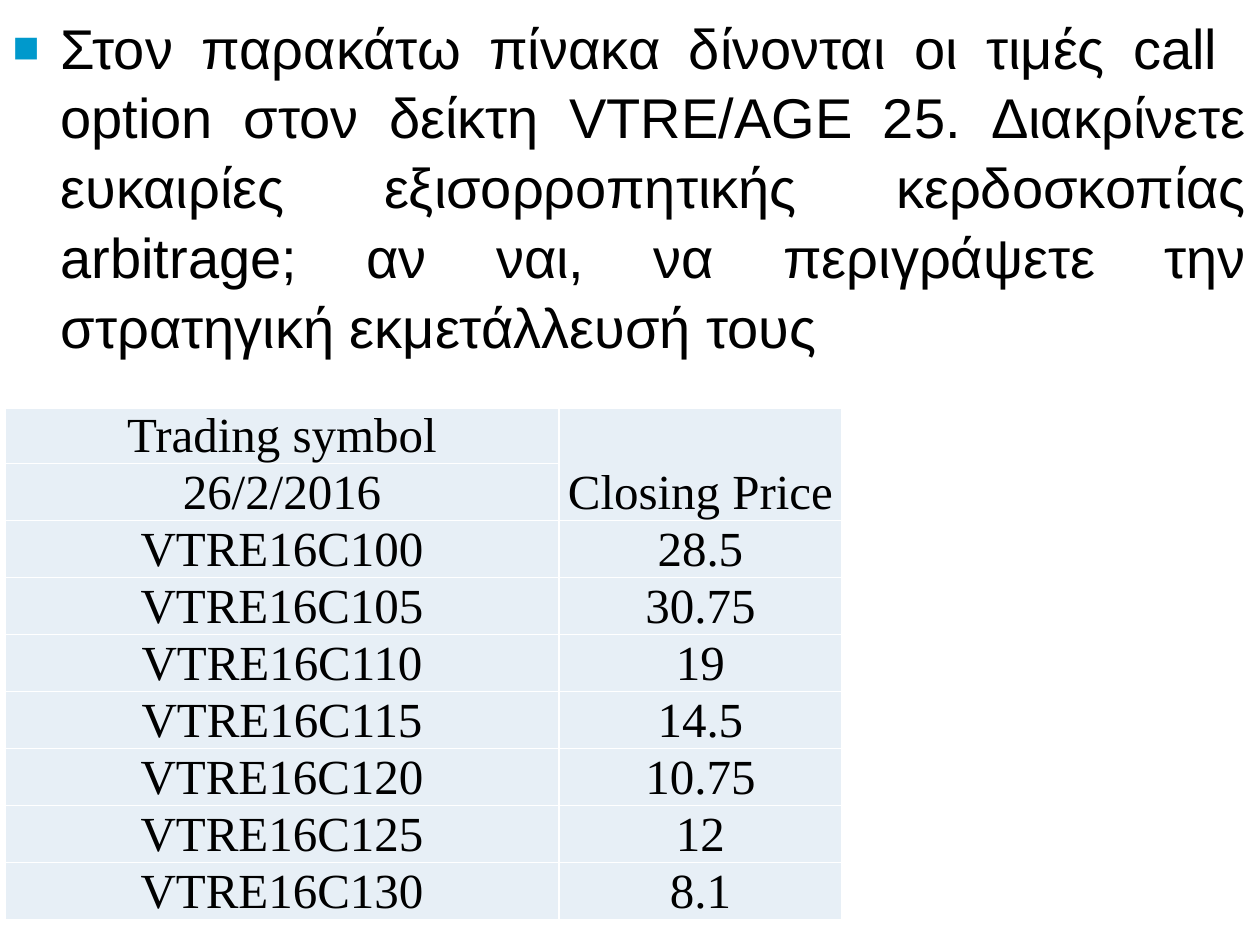
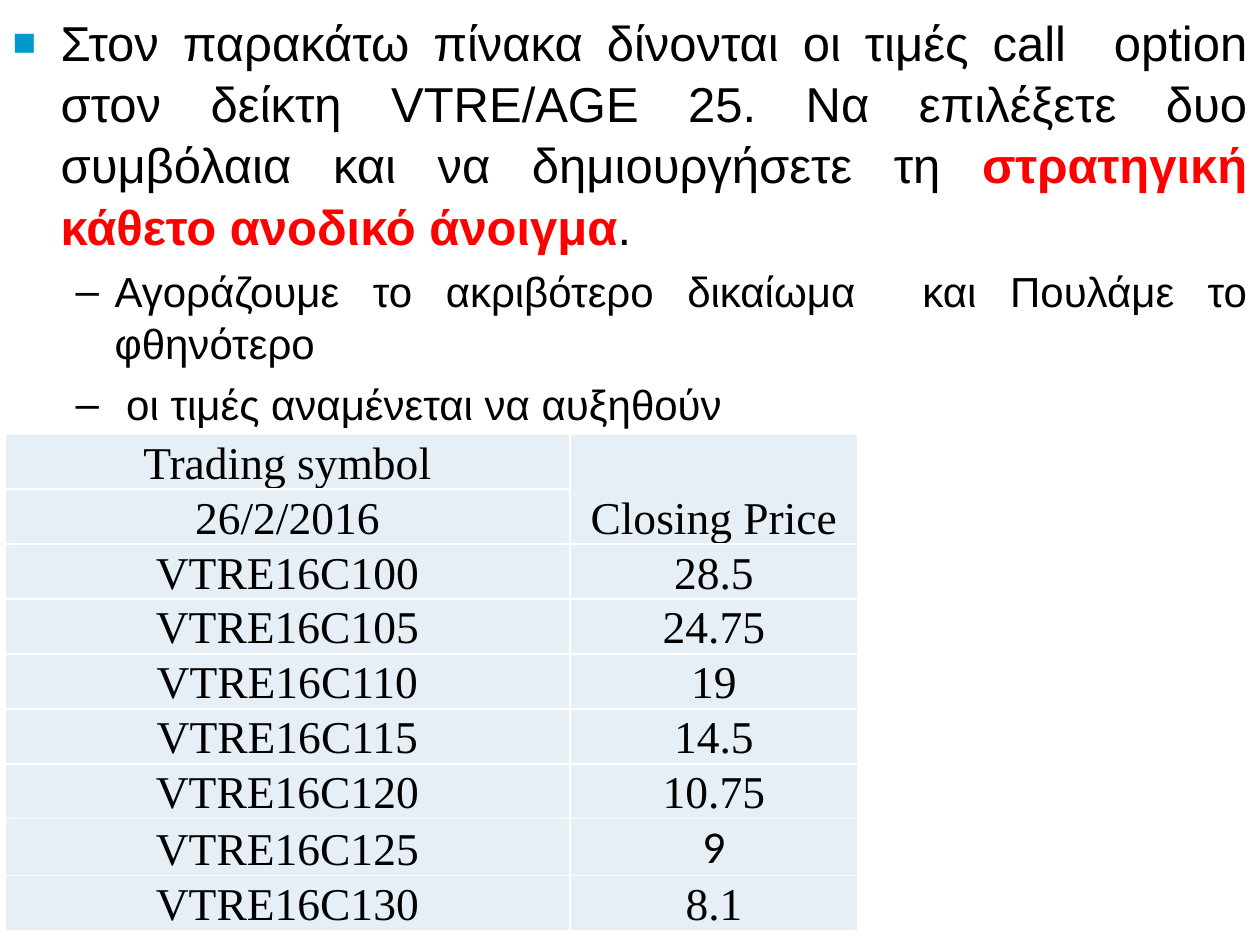
from lxml import etree
from pptx import Presentation
from pptx.dml.color import RGBColor
from pptx.enum.text import MSO_ANCHOR, MSO_AUTO_SIZE, PP_ALIGN
from pptx.oxml.ns import qn
from pptx.util import Pt

EMU_PER_PX = 914400 / 126
CENTER, JUSTIFY = PP_ALIGN.CENTER, PP_ALIGN.JUSTIFY
BOTTOM, NO_FIT = MSO_ANCHOR.BOTTOM, MSO_AUTO_SIZE.NONE
BLACK, WHITE, RED = "000000", "FFFFFF", "FF0000"
BULLET_BLUE, CELL_FILL = "0099CC", "E7EFF6"
LEVELS = [
    {"bullet": "■", "margin": 48, "hanging": 48},
    {"bullet": "–", "margin": 102, "hanging": 39},
]
SYMBOLS = [f"VTRE16C{strike}" for strike in range(100, 131, 5)]


def px(length):
    return round(length * EMU_PER_PX)


def format_span(span, font, size, color=BLACK, bold=False):
    span.font.name = font
    span.font.size = Pt(size)
    span.font.bold = bold
    span.font.color.rgb = RGBColor.from_string(color)


INTRO = "Στον παρακάτω πίνακα δίνονται οι τιμές call  option στον δείκτη VTRE/AGE 25. "
SLIDES = [
    {
        "body_height": 340,
        "paragraphs": [
            (0, 32, [(INTRO + "Διακρίνετε ευκαιρίες εξισορροπητικής κερδοσκοπίας arbitrage; "
                      "αν ναι, να περιγράψετε την στρατηγική εκμετάλλευσή τους", BLACK)]),
        ],
        "table_top": 408,
        "columns": [554, 283],
        "rows": [55] + [57] * 8,
        "size": 28,
        "prices": ["28.5", "30.75", "19", "14.5", "10.75", "12", "8.1"],
        "calibri_prices": [],
    },
    {
        "body_height": 410,
        "paragraphs": [
            (0, 28, [(INTRO + "Να επιλέξετε δυο συμβόλαια και να δημιουργήσετε τη ", BLACK),
                     ("στρατηγική κάθετο ανοδικό άνοιγμα", RED),
                     (".", BLACK)]),
            (1, 24, [("Αγοράζουμε το ακριβότερο δικαίωμα  και Πουλάμε το φθηνότερο", BLACK)]),
            (1, 24, [(" οι τιμές αναμένεται να αυξηθούν", BLACK)]),
        ],
        "table_top": 434,
        "columns": [565, 288],
        "rows": [55] * 9,
        "size": 26,
        "prices": ["28.5", "24.75", "19", "14.5", "10.75", "9", "8.1"],
        "calibri_prices": ["9"],
    },
]

deck = Presentation()
deck.slide_width, deck.slide_height = px(1260), px(945)

for content in SLIDES:
    page = deck.slides.add_slide(deck.slide_layouts[1])
    title = page.shapes.title
    title.element.getparent().remove(title.element)

    body = page.placeholders[1]
    body.left, body.top = px(0), px(4)
    body.width, body.height = px(1260), px(content["body_height"])
    frame = body.text_frame
    frame.auto_size = NO_FIT
    frame.word_wrap = True
    for index, (level, size, spans) in enumerate(content["paragraphs"]):
        para = frame.paragraphs[0] if index == 0 else frame.add_paragraph()
        para.level = level
        para.alignment = JUSTIFY
        para.line_spacing = 1.04
        style = LEVELS[level]
        properties = para._p.get_or_add_pPr()
        properties.set("marL", str(px(style["margin"])))
        properties.set("indent", str(-px(style["hanging"])))
        if level == 0:
            bullet_color = etree.SubElement(properties, qn("a:buClr"))
            etree.SubElement(bullet_color, qn("a:srgbClr"), val=BULLET_BLUE)
            etree.SubElement(properties, qn("a:buSzPct"), val="80000")
        etree.SubElement(properties, qn("a:buChar"), char=style["bullet"])
        for text, color in spans:
            span = para.add_run()
            span.text = text
            format_span(span, "Arial", size, color, bold=color == RED)

    columns, rows = content["columns"], content["rows"]
    table = page.shapes.add_table(
        len(rows), len(columns), px(5), px(content["table_top"]),
        px(sum(columns)), px(sum(rows))).table
    table.first_row = table.horz_banding = False
    for column, width in zip(table.columns, columns):
        column.width = px(width)
    for row, height in zip(table.rows, rows):
        row.height = px(height)

    values = [("Trading symbol", "Closing Price"), ("26/2/2016", "")]
    values += zip(SYMBOLS, content["prices"])
    for row, row_values in enumerate(values):
        for column, value in enumerate(row_values):
            cell = table.cell(row, column)
            cell.margin_left = cell.margin_right = cell.margin_top = px(1)
            cell.margin_bottom = 0
            cell.vertical_anchor = BOTTOM
            for side in ("lnL", "lnR", "lnT", "lnB"):
                border = etree.SubElement(
                    cell._tc.get_or_add_tcPr(), qn(f"a:{side}"), w=str(Pt(1)))
                border_fill = etree.SubElement(border, qn("a:solidFill"))
                etree.SubElement(border_fill, qn("a:srgbClr"), val=WHITE)
            cell.fill.solid()
            cell.fill.fore_color.rgb = RGBColor.from_string(CELL_FILL)
            if value:
                cell.text_frame.text = value
                para = cell.text_frame.paragraphs[0]
                para.alignment = CENTER
                font = "Calibri" if value in content["calibri_prices"] else "Times New Roman"
                format_span(para.runs[0], font, content["size"])
    table.cell(0, 1).merge(table.cell(1, 1))

deck.save("out.pptx")
